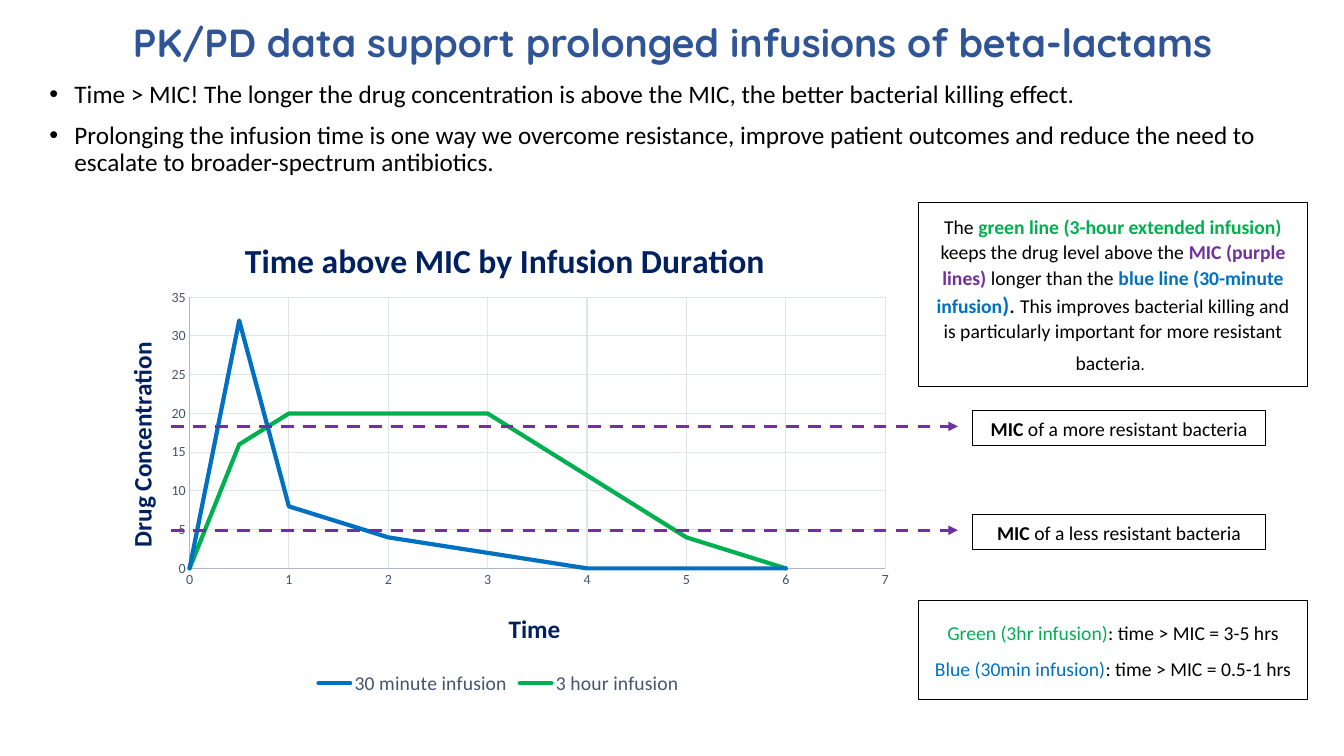
from lxml.etree import SubElement
from pptx import Presentation
from pptx.chart.data import XyChartData
from pptx.dml.color import RGBColor
from pptx.enum.chart import XL_CHART_TYPE, XL_LEGEND_POSITION, XL_TICK_MARK
from pptx.enum.dml import MSO_LINE
from pptx.enum.shapes import MSO_CONNECTOR, MSO_SHAPE
from pptx.enum.text import MSO_ANCHOR, PP_ALIGN
from pptx.oxml.ns import qn
from pptx.util import Inches, Pt

# Content
BLACK, NAVY, SLATE = "000000", "002060", "44546A"
GREEN, BLUE, PURPLE = "00B050", "0070C0", "7030A0"

TITLE = "PK/PD data support prolonged infusions of beta-lactams"
BULLETS = [
    [("Time > MIC! The longer the drug concentration is above the MIC, "
      "the better bacterial killing effect.", {})],
    [("Prolonging the infusion time is one way we overcome resistance, improve patient outcomes "
      "and reduce the need to escalate to broader-spectrum antibiotics.", {})],
]
CHART_TITLE = "Time above MIC by Infusion Duration"
HOURS = [0, 0.5, 1, 2, 3, 4, 5, 6]
INFUSIONS = [
    ("30 minute infusion", BLUE, [0, 32, 8, 4, 2, 0, 0, 0]),
    ("3 hour infusion", GREEN, [0, 16, 20, 20, 20, 12, 4, 0]),
]
MIC_LEVELS = [(4.23, " of a more resistant bacteria"), (5.26, " of a less resistant bacteria")]
EXPLANATION = [[
    ("The ", {}),
    ("green line (3-hour extended infusion) ", {"color": GREEN, "bold": True}),
    ("keeps the drug level above the ", {}),
    ("MIC (purple lines)", {"color": PURPLE, "bold": True}),
    (" longer than the ", {}),
    ("blue line (30-minute infusion", {"color": BLUE, "bold": True}),
    (")", {"color": BLUE, "bold": True, "size": 16}),
    (". ", {"size": 16}),
    ("This improves bacterial killing and is particularly important "
     "for more resistant bacteria", {}),
    (".", {"size": 12}),
    (" ", {"size": 18}),
]]
SUMMARY = [
    [("Green (3hr infusion)", {"color": GREEN}), (": time > MIC = 3-5 hrs", {})],
    [("Blue (30min infusion)", {"color": BLUE}), (": time > MIC = 0.5-1 hrs", {})],
]

# Places in inches: left, top, width, height
CHART_BOX = (0.91, 2.01, 8.07, 4.93)
PLOT_BOX = (1.88, 2.95, 6.9, 2.69)
CHART_TITLE_AT, TIME_AT, CONCENTRATION_AT = (2.37, 2.3), (5.0, 6.02), (1.19, 3.35)
EXPLANATION_BOX = (9.11, 2.01, 3.86, 1.82)
SUMMARY_BOX = (9.11, 5.96, 3.86, 0.98)


def rgb(color):
    return RGBColor.from_string(color)


def style(font, size=14, color=BLACK, bold=False, face="Calibri"):
    font.name, font.size, font.bold = face, Pt(size), bold
    font.color.rgb = rgb(color)


def write(frame, paragraphs, align=None, spacing=1.07, before=0, after=8,
          anchor=MSO_ANCHOR.TOP, **look):
    frame.word_wrap = True
    frame.vertical_anchor = anchor
    for i, runs in enumerate(paragraphs):
        paragraph = frame.add_paragraph() if i else frame.paragraphs[0]
        paragraph.alignment, paragraph.line_spacing = align, spacing
        paragraph.space_before, paragraph.space_after = Pt(before), Pt(after)
        for text, changes in runs:
            run = paragraph.add_run()
            run.text = text
            style(run.font, **{**look, **changes})


def stroke(line, color, width):
    line.color.rgb = rgb(color)
    line.width = Pt(width)


def note_box(box, paragraphs, **look):
    note = slide.shapes.add_shape(MSO_SHAPE.RECTANGLE, *map(Inches, box))
    note.shadow.inherit = False
    note.fill.solid()
    note.fill.fore_color.rgb = rgb("FFFFFF")
    stroke(note.line, BLACK, 0.75)
    write(note.text_frame, paragraphs, align=PP_ALIGN.CENTER, **look)


def place_in_chart(layout, left, top, width=None, height=None, target=None):
    """Set a manual layout, as fractions of the chart, from slide inches."""
    for child in list(layout):
        layout.remove(child)
    manual = SubElement(layout, qn("c:manualLayout"))
    values = [("xMode", "edge"), ("yMode", "edge"),
              ("x", (left - CHART_BOX[0]) / CHART_BOX[2]),
              ("y", (top - CHART_BOX[1]) / CHART_BOX[3])]
    if target:
        values = [("layoutTarget", target)] + values + [
            ("w", width / CHART_BOX[2]), ("h", height / CHART_BOX[3])]
    for tag, value in values:
        SubElement(manual, qn("c:" + tag)).set("val", str(value))


def layout_after(parent, previous=None):
    layout = parent.find(qn("c:layout"))
    if layout is None:
        layout = SubElement(parent, qn("c:layout"))
    parent.remove(layout)
    if previous is None:
        parent.insert(0, layout)
    else:
        previous.addnext(layout)
    return layout


def chart_heading(heading, text, size, at):
    frame = heading.text_frame
    frame.text = text
    style(frame.paragraphs[0].runs[0].font, size=size, color=NAVY, bold=True)
    title = frame._txBody.getparent().getparent()
    place_in_chart(layout_after(title, title.find(qn("c:tx"))), *at)
    return frame


prs = Presentation()
prs.slide_width, prs.slide_height = Inches(13.33), Inches(7.5)
slide = prs.slides.add_slide(prs.slide_layouts[5])

# Title and bullets
heading = slide.shapes.title
heading.left, heading.top, heading.width, heading.height = map(Inches, (0.92, 0.13, 11.5, 0.63))
write(heading.text_frame, [[(TITLE, {})]], align=PP_ALIGN.CENTER, spacing=0.9, after=0,
      anchor=MSO_ANCHOR.MIDDLE, size=28, color="2F5597", bold=True, face="Quicksand")

points = slide.shapes.add_textbox(*map(Inches, (0.39, 0.76, 12.32, 1.08))).text_frame
write(points, BULLETS, spacing=0.9, before=10, after=0, size=18)
for paragraph in points.paragraphs:
    properties = paragraph._p.get_or_add_pPr()
    properties.set("marL", str(Inches(0.25)))
    properties.set("indent", str(-Inches(0.25)))
    SubElement(properties, qn("a:buFont")).set("typeface", "Arial")
    SubElement(properties, qn("a:buChar")).set("char", "•")

# Concentration chart
data = XyChartData()
for name, _, levels in INFUSIONS:
    series = data.add_series(name)
    for hour, level in zip(HOURS, levels):
        series.add_data_point(hour, level)
chart = slide.shapes.add_chart(XL_CHART_TYPE.XY_SCATTER_SMOOTH_NO_MARKERS,
                               *map(Inches, CHART_BOX), data).chart
style(chart.font, size=10)
chart.plots[0].vary_by_categories = False
for series, (_, color, _) in zip(chart.plots[0].series, INFUSIONS):
    series.smooth = True
    stroke(series.format.line, color, 3)
    series.format.line._ln.set("cap", "rnd")

chart.has_title = True
chart_heading(chart.chart_title, CHART_TITLE, 24, CHART_TITLE_AT)
time_axis, level_axis = chart.category_axis, chart.value_axis
for axis, top, step in [(time_axis, 7, 1), (level_axis, 35, 5)]:
    axis.minimum_scale, axis.maximum_scale, axis.major_unit = 0, top, step
    axis.major_tick_mark = axis.minor_tick_mark = XL_TICK_MARK.NONE
    axis.has_major_gridlines = True
    stroke(axis.major_gridlines.format.line, "E0E5EB", 0.75)
    stroke(axis.format.line, "ADB9CA", 0.75)
    style(axis.tick_labels.font, size=10, color=SLATE)
chart_heading(time_axis.axis_title, "Time", 18, TIME_AT)
upright = chart_heading(level_axis.axis_title, "Drug Concentration", 18, CONCENTRATION_AT)
upright._txBody.find(qn("a:bodyPr")).set("rot", "-5400000")
upright._txBody.find(qn("a:bodyPr")).set("vert", "horz")

chart.has_legend = True
chart.legend.position = XL_LEGEND_POSITION.BOTTOM
chart.legend.include_in_layout = False
style(chart.legend.font, size=14, color=SLATE)
plot_area = chart._chartSpace.chart.plotArea
place_in_chart(layout_after(plot_area), *PLOT_BOX, target="inner")

# MIC arrows and their labels
for level, meaning in MIC_LEVELS:
    arrow = slide.shapes.add_connector(MSO_CONNECTOR.STRAIGHT, Inches(1.7), Inches(level),
                                       Inches(9.5), Inches(level))
    stroke(arrow.line, PURPLE, 2.25)
    arrow.line.dash_style = MSO_LINE.DASH
    SubElement(arrow.line._ln, qn("a:tailEnd")).set("type", "triangle")
    SubElement(arrow._element.spPr, qn("a:effectLst"))
    note_box((9.65, level - 0.16, 2.9, 0.35), [[("MIC", {"bold": True}), (meaning, {})]])

# Explanation and summary
note_box(EXPLANATION_BOX, EXPLANATION, anchor=MSO_ANCHOR.MIDDLE)
note_box(SUMMARY_BOX, SUMMARY, anchor=MSO_ANCHOR.MIDDLE)

prs.save("out.pptx")
